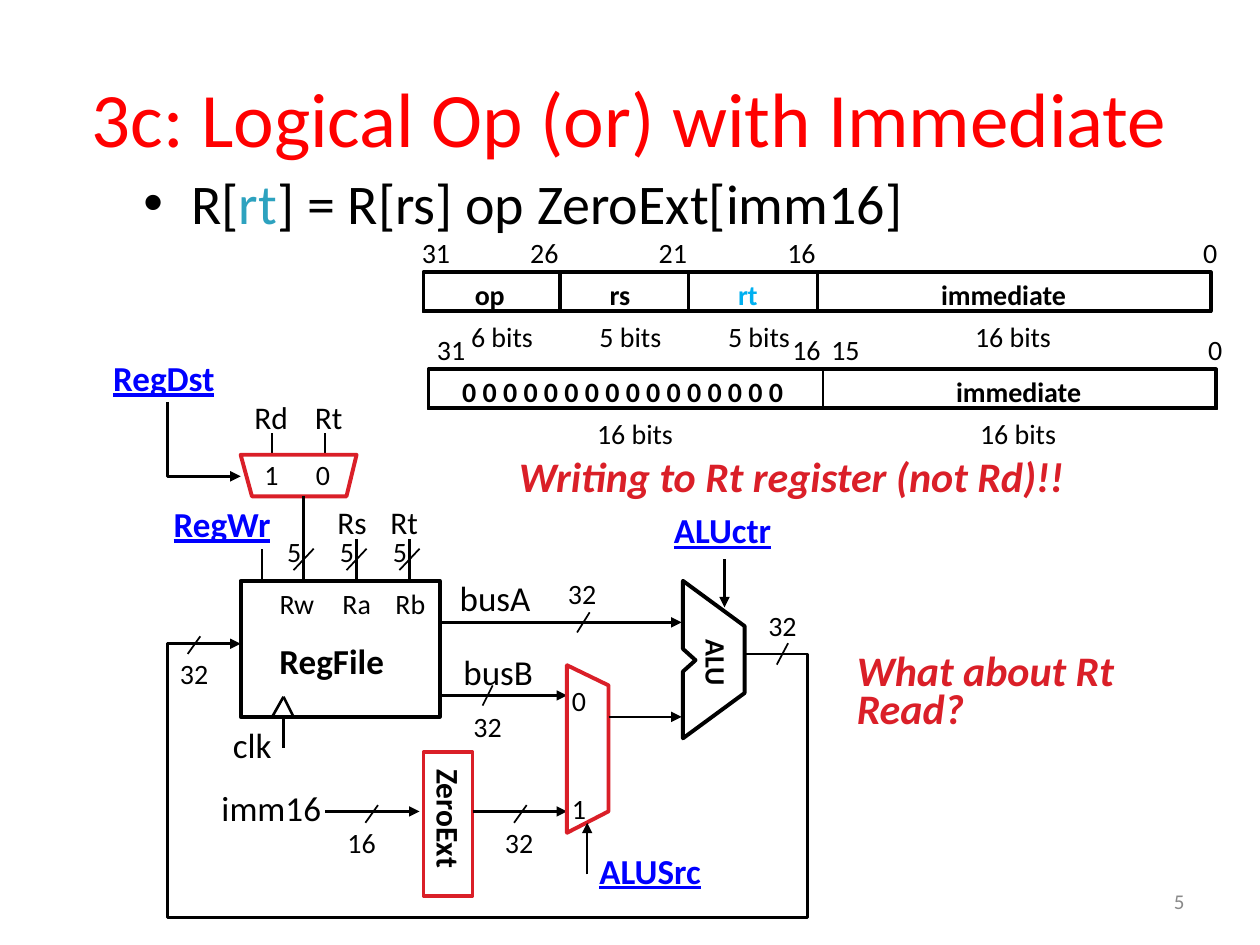
from dataclasses import dataclass
from typing import Any

from lxml import etree
from pptx import Presentation
from pptx import util as u
from pptx.dml.color import RGBColor
from pptx.enum import shapes, text
from pptx.oxml import ns

COLORS = {"ink": "000000", "title": "FF0000", "target": "2DA2BF", "field": "00B0F0",
          "signal": "0000FF", "accent": "DA1F28", "number": "898989"}
SIGNAL = {"size": 20, "color": "signal", "bold": True, "underline": True}
REMARK = {"size": 24, "color": "accent", "bold": True, "italic": True}


def color(name):
    """Return the named colour."""
    return RGBColor.from_string(COLORS[name])


def assign(target, values):
    """Set every attribute named in values."""
    for name, value in values.items():
        setattr(target, name, value)


def add_run(paragraph, words, size=16, color_name="ink", **style):
    """Append formatted words to a paragraph."""
    run = paragraph.add_run()
    run.text = words
    assign(run.font, {"name": "Calibri", "size": u.Pt(size), **style})
    run.font.color.rgb = color(color_name)


def draw_line(shape, width, color_name, arrow=False):
    """Style a line and give it an optional arrowhead."""
    shape.line.width = u.Pt(width)
    shape.line.color.rgb = color(color_name)
    if arrow:
        head = etree.SubElement(shape.element.spPr.find(ns.qn("a:ln")), ns.qn("a:tailEnd"))
        head.set("type", "triangle")


@dataclass
class Area:
    """A region of the slide with its own origin."""
    slide: Any
    left: float
    top: float

    def at(self, x, y):
        """Turn local inches into slide lengths."""
        return u.Inches(self.left + x), u.Inches(self.top + y)

    def label(self, words, x, y, width=None, size=16, color="ink", height=None, wrap=False,
              insets=(0.1, 0.05), align="LEFT", anchor="TOP", spacing=None, rotation=0, **style):
        """Place a line of text and return its paragraph."""
        width = width or 0.2 + 0.115 * len(words)
        height = height or round(size / 60 + 0.1, 2)
        box = self.slide.shapes.add_textbox(*self.at(x, y), u.Inches(width), u.Inches(height))
        box.rotation = rotation
        side, edge = map(u.Inches, insets)
        assign(box.text_frame, {"word_wrap": wrap, "margin_left": side, "margin_right": side,
                                "margin_top": edge, "margin_bottom": edge,
                                "vertical_anchor": getattr(text.MSO_ANCHOR, anchor)})
        paragraph = box.text_frame.paragraphs[0]
        assign(paragraph, {"alignment": getattr(text.PP_ALIGN, align), "line_spacing": spacing})
        if words:
            add_run(paragraph, words, size, color, **style)
        return paragraph

    def wire(self, x1, y1, x2, y2, width=1.5, arrow=False):
        """Draw a straight wire."""
        line = self.slide.shapes.add_connector(
            shapes.MSO_CONNECTOR.STRAIGHT, *self.at(x1, y1), *self.at(x2, y2))
        draw_line(line, width, "ink", arrow)
        etree.SubElement(line.element.spPr, ns.qn("a:effectLst"))

    def slash(self, x, y, dx=0.1, dy=0.14):
        """Mark a bus width with a slash centred on a point."""
        self.wire(x + dx / 2, y - dy / 2, x - dx / 2, y + dy / 2, 1)

    def block(self, x, y, width, height, weight, color="ink"):
        """Draw an unfilled rectangle."""
        rect = self.slide.shapes.add_shape(
            shapes.MSO_SHAPE.RECTANGLE, *self.at(x, y), u.Inches(width), u.Inches(height))
        rect.fill.background()
        rect.shadow.inherit = False
        draw_line(rect, weight, color)

    def outline(self, points, weight=2.25, color="ink", closed=True, arrow=False):
        """Draw an unfilled outline or bent wire."""
        first, *others = [self.at(*point) for point in points]
        builder = self.slide.shapes.build_freeform(*first)
        builder.add_line_segments(others, close=closed)
        path = builder.convert_to_shape()
        path.fill.background()
        path.shadow.inherit = False
        draw_line(path, weight, color, arrow)


def add_headings(area):
    """Write the title and the register transfer bullet."""
    area.label("3c: Logical Op (or) with Immediate", 0, 0, 9, 44, "title", 1.25, True,
               align="CENTER", anchor="MIDDLE")
    bullet = area.label("", 0.54, 0.99, 8.96, height=0.45, wrap=True)
    properties = bullet._p.get_or_add_pPr()
    properties.set("marL", str(u.Inches(0.38)))
    properties.set("indent", str(-u.Inches(0.38)))
    etree.SubElement(properties, ns.qn("a:buFont")).set("typeface", "Arial")
    etree.SubElement(properties, ns.qn("a:buChar")).set("char", "•")
    for words, name in (("R[", "ink"), ("rt", "target"), ("] = R[rs] op ZeroExt[imm16]", "ink")):
        add_run(bullet, words, 32, name)


def add_word(area, bits, fields):
    """Draw a 32-bit word with its bit numbers and fields."""
    area.block(0, 0.34, 6.25, 0.31, 2)
    for number, x in bits:
        area.label(number, x, 0)
    for x, width, name, name_x, name_width, size, size_x, name_color in fields:
        area.block(x, 0.34, width, 0.32, 1)
        area.label(name, name_x, 0.33, name_width, color=name_color, bold=True)
        area.label(size, size_x, 0.67, 0.81 if len(size) > 6 else 0.7)


def add_destination_mux(area):
    """Draw the mux that picks the written register."""
    area.label("RegDst", 0, 0, 1.03, **SIGNAL)
    for name, name_x, width, digit, digit_x, stub_x in (
            ("Rd", 1.12, 0.47, "1", 1.2, 1.36), ("Rt", 1.6, 0.43, "0", 1.61, 1.78)):
        area.label(name, name_x, 0.33, width, 18)
        area.label(digit, digit_x, 0.8)
        area.wire(stub_x, 0.66, stub_x, 0.83, 1)
    area.outline([(1.11, 0.83), (1.2, 1.16), (1.95, 1.16), (2.03, 0.83)], color="accent")
    area.outline([(0.53, 0.41), (0.53, 1), (1.11, 1)], 1.5, closed=False, arrow=True)


def add_register_file(area):
    """Draw the register file with its ports and clock."""
    area.block(0.63, 0.67, 1.58, 1.08, 2.25)
    area.label("RegWr", 0, 0, 0.99, **SIGNAL)
    area.label("RegFile", 0.84, 1.09, 1.04, 20, bold=True)
    area.label("clk", 0.47, 1.75, 0.51, 20)
    area.label("Rs", 1.3, 0, 0.44, 18)
    area.label("Rt", 1.72, 0, 0.43, 18)
    area.wire(0.8, 0.42, 0.8, 0.67)
    for port, x, top, name_x, width in (
            ("Rw", 1.13, 0, 0.84, 0.48), ("Ra", 1.55, 0.34, 1.34, 0.44),
            ("Rb", 1.97, 0.34, 1.76, 0.46)):
        area.wire(x, top, x, 0.67)
        area.slash(x, 0.5, 0.16, 0.17)
        area.label("5", x - 0.23, 0.25)
        area.label(port, name_x, 0.67, width)
    for x, y in ((0.88, 1.75), (1.05, 1.75), (0.97, 2)):
        area.wire(0.97, 1.75 if y == 2 else 1.59, x, y)
    area.label("32", 0.05, 1.22)
    area.slash(0.26, 1.18)


def add_buses(area):
    """Draw the two read buses."""
    for name, name_x, y, end, mark_x, mark_dx, width_x, width_y in (
            ("busA", 0.05, 0, 1.91, 1.13, 0.1, 0.91, 0),
            ("busB", 0.08, 0.58, 1, 0.37, 0.08, 0.16, 1.05)):
        area.label(name, name_x, y, 0.78, 20)
        area.wire(0, y + 0.41, end, y + 0.41, arrow=True)
        area.slash(mark_x, y + 0.41, mark_dx, 0.16)
        area.label("32", width_x, width_y)


def add_extender(area):
    """Draw the zero extender for the immediate."""
    area.block(1.7, 0, 0.39, 1.14, 2, "accent")
    area.label("ZeroExt", 1.41, 0.33, 0.99, 18, rotation=90, bold=True)
    area.label("imm16", 0, 0.22, 1, 20)
    for width, x, mark_x, width_x in (("16", 0.92, 1.29, 1), ("32", 2.09, 2.47, 2.25)):
        area.wire(x, 0.47, x + 0.75, 0.47, arrow=True)
        area.slash(mark_x, 0.49)
        area.label(width, width_x, 0.53)


def add_source_mux(area):
    """Draw the mux that picks the second operand."""
    area.label("0", 0, 0.1)
    area.label("1", 0, 0.95)
    area.outline([(0.06, 0), (0.06, 1.33), (0.39, 1.16), (0.39, 0.16)], color="accent")
    area.wire(0.39, 0.41, 0.97, 0.41, arrow=True)
    area.wire(0.22, 1.66, 0.22, 1.25, arrow=True)
    area.label("ALUSrc", 0.22, 1.41, 1.04, **SIGNAL)


def add_alu(area):
    """Draw the ALU with its control and result width."""
    area.label("ALUctr", 0, 0, 1.14, **SIGNAL)
    area.wire(0.5, 0.45, 0.5, 0.83, arrow=True)
    area.label("ALU", 0.14, 1.1, 0.59, rotation=90, bold=True)
    area.outline([(0.17, 0.62), (0.17, 1.16), (0.27, 1.25), (0.17, 1.34), (0.17, 1.87),
                  (0.66, 1.51), (0.66, 0.98)])
    area.label("32", 0.75, 0.79)
    area.slash(0.96, 1.2, 0.09, 0.17)


def add_write_back(area):
    """Route the result back to the register file."""
    area.outline([(4.58, 0.08), (5.08, 0.08), (5.08, 2.17), (0, 2.17), (0, 0), (0.58, 0)],
                 1.5, closed=False, arrow=True)


def add_remarks(area):
    """Write the two remarks and the slide number."""
    area.label("Writing to Rt register (not Rd)!!", 0, 0, 4.62, **REMARK)
    area.label("What about Rt Read?", 2.71, 1.65, 2.93, height=0.68, wrap=True,
               insets=(0.07, 0.03), spacing=0.75, **REMARK)
    area.label("5", 3.15, 3.42, 2.33, 12, "number", 0.4, True, align="RIGHT", anchor="MIDDLE")


def main():
    """Build the slide and save it."""
    deck = Presentation()
    assign(deck, {"slide_width": u.Inches(10), "slide_height": u.Inches(7.5)})
    slide = deck.slides.add_slide(deck.slide_layouts[6])
    add_word(Area(slide, 3.36, 1.82),
             (("31", -0.11), ("26", 0.75), ("21", 1.77), ("16", 2.79), ("0", 6.09)),
             ((0, 1.08, "op", 0.31, 0.44, "6 bits", 0.28, "ink"),
              (1.09, 1.01, "rs", 1.38, 0.37, "5 bits", 1.3, "ink"),
              (2.11, 1.01, "rt", 2.4, 0.37, "5 bits", 2.32, "field"),
              (3.13, 3.12, "immediate", 4.01, 1.21, "16 bits", 4.28, "ink")))
    add_word(Area(slide, 3.4, 2.59),
             (("31", -0.03), ("16", 2.79), ("15", 3.1), ("0", 6.09)),
             ((0, 3.13, " ".join("0" * 16), 0.17, 2.81, "16 bits", 1.24, "ink"),
              (3.13, 3.13, "immediate", 4.09, 1.21, "16 bits", 4.28, "ink")))
    for add_region, left, top in (
            (add_headings, 0.5, 0.3), (add_destination_mux, 0.8, 2.78),
            (add_register_file, 1.28, 3.94), (add_buses, 3.5, 4.53),
            (add_extender, 1.66, 5.97), (add_source_mux, 4.44, 5.28), (add_alu, 5.25, 3.99),
            (add_write_back, 1.33, 5.11), (add_remarks, 4.02, 3.53)):
        add_region(Area(slide, left, top))
    deck.save("out.pptx")


if __name__ == "__main__":
    main()
